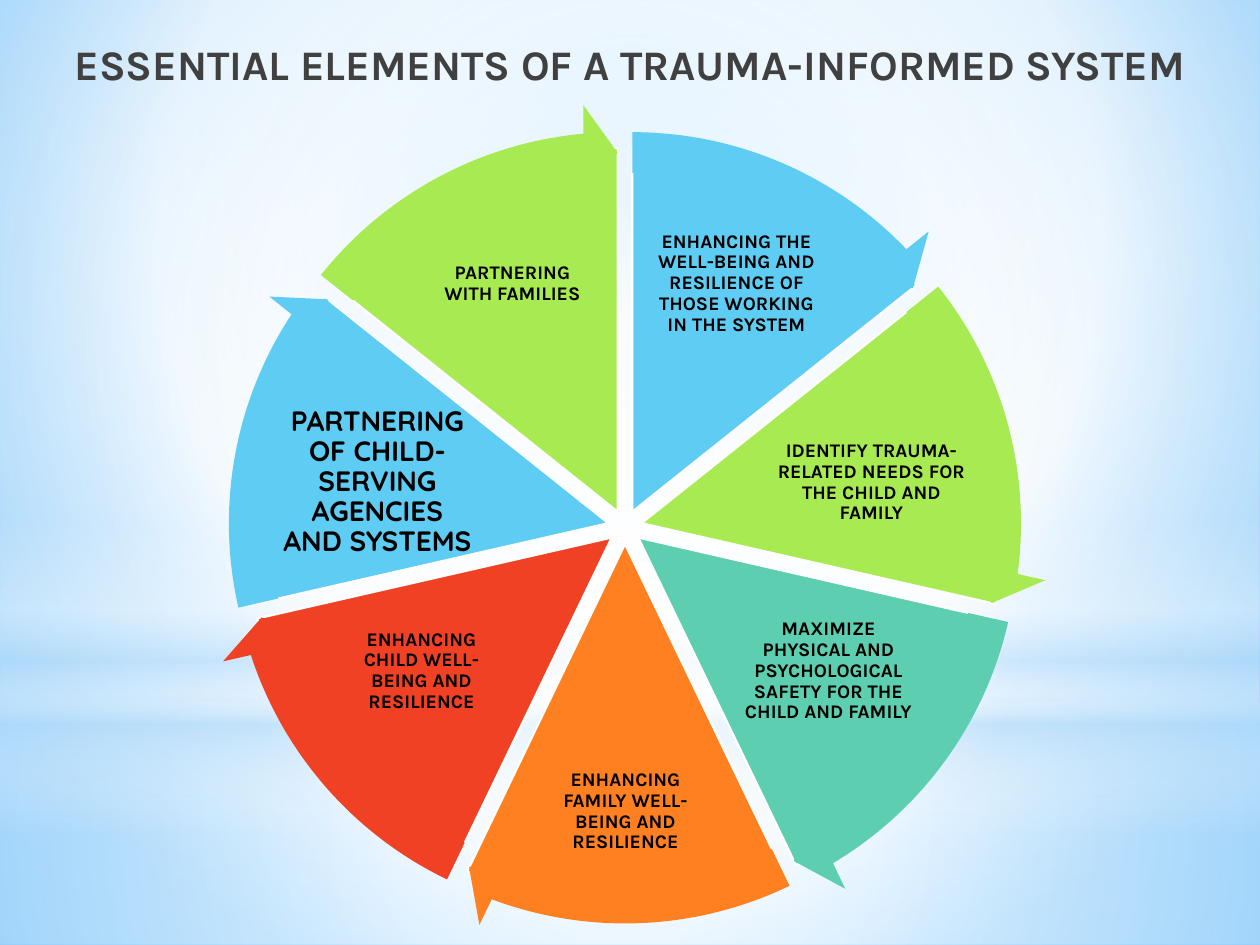
from math import cos, radians, sin

from lxml import etree
from pptx import Presentation
from pptx.dml.color import RGBColor
from pptx.enum.shapes import MSO_SHAPE as Shape
from pptx.enum.text import MSO_ANCHOR as Anchor, PP_ALIGN as Align
from pptx.oxml import parse_xml
from pptx.oxml.ns import nsdecls, qn
from pptx.util import Emu, Pt

PX = 914400 / 126
SLIDE_W, SLIDE_H = 1260, 945

# Wheel geometry: seven slices pushed outwards from a common centre
CENTER_X, CENTER_Y = 625, 527
PIE_SIZE, ARROW_SIZE, PUSH = 727, 816, 17
TURN, TOP = 216, 162  # full circle and twelve o'clock in adjustment units
HEAD_ANGLE, BAND, HEAD_WIDTH = 3.28, 0.05, 0.06

BLUE, LIME, TEAL, ORANGE, RED = "5ECCF3", "A7EA52", "5DCEAF", "FF8021", "F14124"
SMALL = {"name": "Karla", "size": Pt(11), "bold": True}
LARGE = {"name": "Quicksand", "size": Pt(16), "bold": True}
HEADING = {"name": "Karla", "size": Pt(24), "bold": True}

# Colour, label, label box, label font; clockwise from the top
SLICES = [
    (BLUE, "ENHANCING THE WELL-BEING AND RESILIENCE OF THOSE WORKING IN THE SYSTEM",
     (650, 214, 173, 139), SMALL),
    (LIME, "IDENTIFY TRAUMA-RELATED NEEDS FOR THE CHILD AND FAMILY",
     (772, 422, 199, 121), SMALL),
    (TEAL, "MAXIMIZE PHYSICAL AND PSYCHOLOGICAL SAFETY FOR THE CHILD AND FAMILY",
     (742, 604, 173, 134), SMALL),
    (ORANGE, "ENHANCING FAMILY WELL-BEING AND RESILIENCE",
     (541, 751, 169, 121), SMALL),
    (RED, "ENHANCING CHILD WELL-BEING AND RESILIENCE",
     (335, 604, 173, 134), SMALL),
    (BLUE, "PARTNERING OF CHILD-SERVING AGENCIES AND SYSTEMS",
     (278, 422, 199, 121), LARGE),
    (LIME, "PARTNERING WITH FAMILIES", (426, 214, 173, 139), SMALL),
]

# Backdrop gradients: stops are (position %, colour, opacity %)
CENTRED = (50, 50, 50, 50)
SKY = [(0, "9ED5FF", 100), (60, "FFFFFF", 100), (100, "5BB9FF", 100)]
BACKDROP = [
    (Shape.RECTANGLE, (0, 703, SLIDE_W, 242),
     [(0, "FFFFFF", 91), (37, "FFFFFF", 76), (100, "B4DCFA", 79)], CENTRED),
    (Shape.RECTANGLE, (0, 0, SLIDE_W, 703),
     [(0, "FFFFFF", 89), (48, "FFFFFF", 62), (100, "B4DCFA", 79)], CENTRED),
    (Shape.RECTANGLE, (0, 519, SLIDE_W, 315),
     [(0, "FFFFFF", 0), (29, "FFFFFF", 30), (45, "B4DCFA", 40),
      (55, "FFFFFF", 26), (65, "B4DCFA", 60), (100, "FFFFFF", 0)], None),
    (Shape.OVAL, (0, 220, SLIDE_W, 703),
     [(0, "FFFFFF", 100), (56, "FFFFFF", 0)], CENTRED),
]


def px(*lengths):
    return [Emu(round(length * PX)) for length in lengths]


def color(hex_text):
    return RGBColor.from_string(hex_text)


def apply(target, values):
    for key, value in values.items():
        setattr(target, key, value)


def set_gradient(fill, owner, stops, focus):
    """Circular gradient around focus, or a vertical one without it."""
    fill.solid()
    gradient = parse_xml(f'<a:gradFill {nsdecls("a")} rotWithShape="1"><a:gsLst/></a:gradFill>')
    for position, hex_text, opacity in stops:
        stop = etree.SubElement(gradient[0], qn("a:gs"), pos=str(position * 1000))
        tone = etree.SubElement(stop, qn("a:srgbClr"), val=hex_text)
        etree.SubElement(tone, qn("a:alpha"), val=str(opacity * 1000))
    if focus:
        circle = etree.SubElement(gradient, qn("a:path"), path="circle")
        sides = {side: str(inset * 1000) for side, inset in zip("ltrb", focus)}
        etree.SubElement(circle, qn("a:fillToRect"), **sides)
    else:
        etree.SubElement(gradient, qn("a:lin"), ang="5400000", scaled="0")
    solid = next(owner.iter(qn("a:solidFill")))
    solid.getparent().replace(solid, gradient)


def add_backdrop(slide):
    set_gradient(slide.background.fill, slide.element, SKY, (20, 10, 20, 60))
    for kind, box, stops, focus in BACKDROP:
        layer = slide.shapes.add_shape(kind, *px(*box))
        layer.shadow.inherit = False
        layer.line.fill.background()
        set_gradient(layer.fill, layer.element, stops, focus)


def add_round(slide, kind, index, size, adjustments, fill):
    """Add one part of the wheel, centred on its slice's own hub."""
    middle = radians((index + 0.5) * 360 / len(SLICES))
    left = CENTER_X + PUSH * sin(middle) - size / 2
    top = CENTER_Y - PUSH * cos(middle) - size / 2
    part = slide.shapes.add_shape(kind, *px(left, top, size, size))
    part.shadow.inherit = False
    part.fill.solid()
    part.fill.fore_color.rgb = color(fill)
    part.line.fill.background()
    for number, value in enumerate(adjustments):
        part.adjustments[number] = value
    return part


def slice_angles(index):
    step = TURN / len(SLICES)
    return (TOP + index * step) % TURN, (TOP + (index + 1) * step) % TURN


def add_slice(slide, index, fill):
    wedge = add_round(slide, Shape.PIE, index, PIE_SIZE, slice_angles(index), fill)
    wedge.line.color.rgb = color("FFFFFF")
    wedge.line.width = Pt(1.25)


def add_arrow(slide, index, fill):
    start, end = slice_angles(index)
    tip = (end - HEAD_ANGLE) % TURN
    add_round(slide, Shape.CIRCULAR_ARROW, index, ARROW_SIZE,
              (BAND, HEAD_ANGLE, tip, start, HEAD_WIDTH), fill)


def write_text(frame, text, font, hex_text):
    paragraph = frame.paragraphs[0]
    paragraph.alignment = Align.CENTER
    run = paragraph.add_run()
    run.text = text
    apply(run.font, font)
    run.font.color.rgb = color(hex_text)
    return paragraph


def add_label(slide, text, box, font):
    frame = slide.shapes.add_textbox(*px(*box)).text_frame
    inset = Pt(1.4)
    apply(frame, {"word_wrap": True, "vertical_anchor": Anchor.MIDDLE,
                  "margin_left": inset, "margin_right": inset,
                  "margin_top": inset, "margin_bottom": inset})
    write_text(frame, text, font, "000000").line_spacing = 0.9


def place_title(slide, text):
    title = slide.shapes.title
    left, top, width, height = px(0, 32, SLIDE_W, 94)
    apply(title, {"left": left, "top": top, "width": width, "height": height})
    apply(title.text_frame, {"word_wrap": True, "vertical_anchor": Anchor.TOP})
    write_text(title.text_frame, text, HEADING, "404040")
    # Bring the title in front of the backdrop
    title.element.getparent().append(title.element)


def main():
    deck = Presentation()
    deck.slide_width, deck.slide_height = px(SLIDE_W, SLIDE_H)
    slide = deck.slides.add_slide(deck.slide_layouts[5])

    add_backdrop(slide)

    # Wheel: slices with labels, then the arrows along the rim
    for index, (fill, text, box, font) in enumerate(SLICES):
        add_slice(slide, index, fill)
        add_label(slide, text, box, font)
    for index, (fill, *_) in enumerate(SLICES):
        add_arrow(slide, index, fill)

    place_title(slide, "ESSENTIAL ELEMENTS OF A TRAUMA-INFORMED SYSTEM")
    deck.save("out.pptx")


if __name__ == "__main__":
    main()
